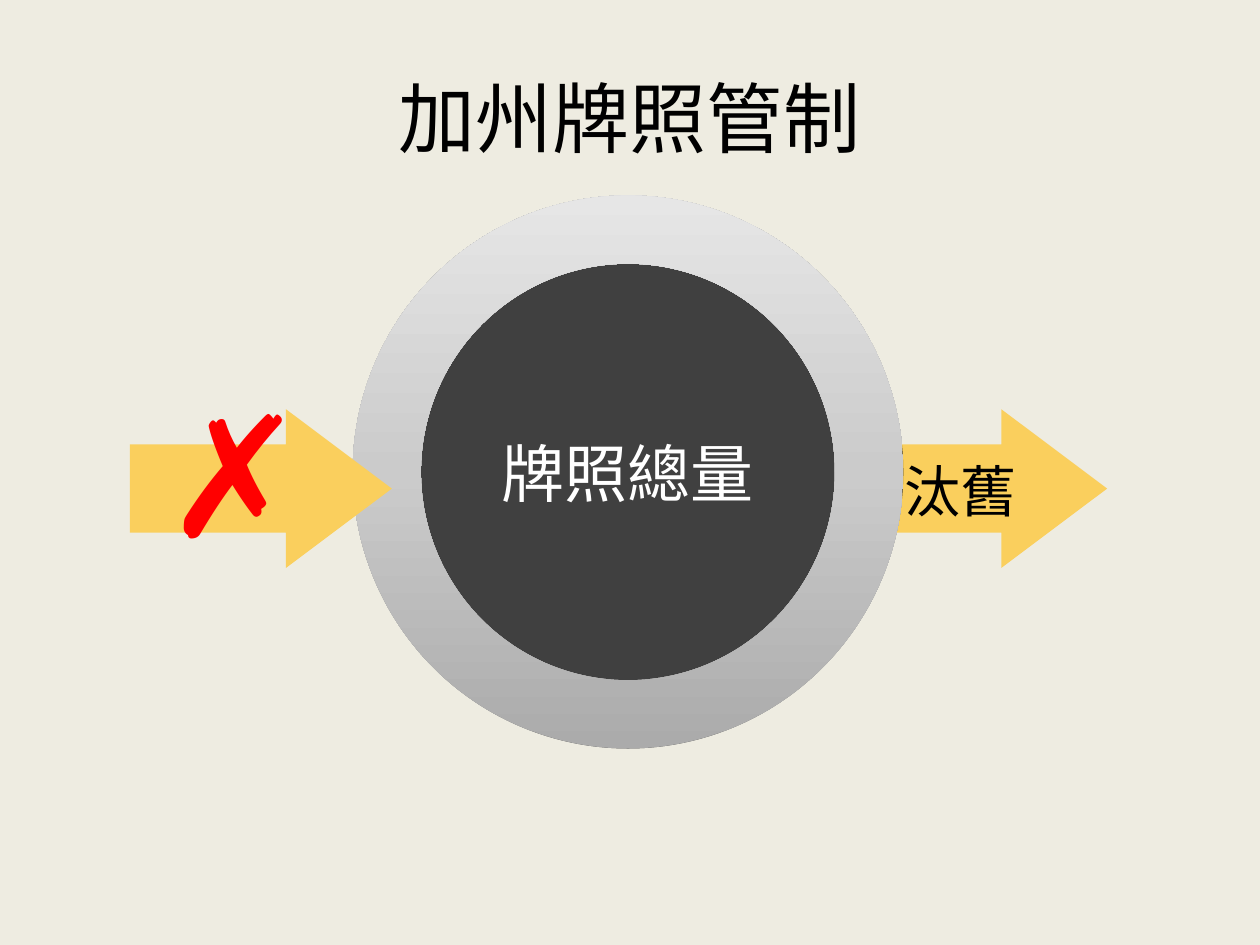
import copy
from dataclasses import dataclass

import pptx
import pptx.dml.color
import pptx.enum.shapes
import pptx.enum.text
import pptx.oxml.ns
import pptx.util
from lxml import etree

Cm = pptx.util.Cm
SHAPE = pptx.enum.shapes.MSO_SHAPE
ANCHOR = pptx.enum.text.MSO_ANCHOR
ALIGN = pptx.enum.text.PP_ALIGN
qn = pptx.oxml.ns.qn

CJK_FONT = "Noto Sans CJK SC"


@dataclass
class Box:
    """Position and size in centimetres."""
    left: float
    top: float
    width: float
    height: float

    def lengths(self) -> tuple:
        return Cm(self.left), Cm(self.top), Cm(self.width), Cm(self.height)


TITLE = Box(1.27, 0.76, 22.86, 3.18)
CIRCLE = Box(7.11, 3.94, 11.1, 11.15)
INFLOW = Box(2.62, 8.25, 5.28, 3.2)
OUTFLOW = Box(17.04, 8.25, 5.28, 3.2)
CROSS = Box(3.07, 7.32, 2.84, 4.37)
OUTFLOW_LABEL = Box(17.98, 9.07, 2.79, 1.63)


def rgb(value: str) -> pptx.dml.color.RGBColor:
    return pptx.dml.color.RGBColor.from_string(value)


def write(shape, text: str, *, size: int, color: str = "000000",
          font: str = CJK_FONT, align=ALIGN.LEFT, anchor=ANCHOR.TOP,
          wrap: bool = True) -> None:
    frame = shape.text_frame
    frame.word_wrap = wrap
    frame.vertical_anchor = anchor
    paragraph = frame.paragraphs[0]
    paragraph.alignment = align
    run = paragraph.add_run()
    run.text = text
    run.font.size = pptx.util.Pt(size)
    run.font.name = font
    run.font.color.rgb = rgb(color)
    # East Asian glyphs take their own typeface
    east_asian = etree.SubElement(run.font._element, qn("a:ea"))
    east_asian.set("typeface", font)


def add_plain_shape(slide, kind, box: Box, adjustments: tuple = ()):
    shape = slide.shapes.add_shape(kind, *box.lengths())
    shape.shadow.inherit = False
    shape.line.fill.background()
    for index, value in enumerate(adjustments):
        shape.adjustments[index] = value
    return shape


def add_solid_shape(slide, kind, box: Box, color: str, adjustments: tuple = ()):
    shape = add_plain_shape(slide, kind, box, adjustments)
    shape.fill.solid()
    shape.fill.fore_color.rgb = rgb(color)
    return shape


def add_arrow(slide, box: Box) -> None:
    add_solid_shape(slide, SHAPE.RIGHT_ARROW, box, "FACF5D", (0.556, 0.667))


def fill_gradient(shape, colors: tuple, angle: int) -> None:
    """Spread the colours evenly along the gradient."""
    shape.fill.gradient()
    shape.fill.gradient_angle = angle
    stop_list = shape._element.spPr.find(".//" + qn("a:gsLst"))
    while len(stop_list) < len(colors):
        stop_list.append(copy.deepcopy(stop_list[0]))
    for index, (stop, color) in enumerate(zip(shape.fill.gradient_stops, colors)):
        stop.position = index / (len(colors) - 1)
        stop.color.rgb = rgb(color)


def main() -> None:
    deck = pptx.Presentation()
    deck.slide_width, deck.slide_height = Cm(25.4), Cm(19.05)
    slide = deck.slides.add_slide(deck.slide_layouts[5])
    slide.background.fill.solid()
    slide.background.fill.fore_color.rgb = rgb("EEECE1")

    # Title
    title = slide.shapes.title
    title.left, title.top, title.width, title.height = TITLE.lengths()
    write(title, "加州牌照管制", size=44, align=ALIGN.CENTER, anchor=ANCHOR.MIDDLE)

    # Outflow arrow runs behind the circle
    add_arrow(slide, OUTFLOW)

    # Licence total with its surrounding ring
    total = add_solid_shape(slide, SHAPE.OVAL, CIRCLE, "404040")
    write(total, "牌照總量", size=36, color="FFFFFF", align=ALIGN.CENTER,
          anchor=ANCHOR.MIDDLE)
    ring = add_plain_shape(slide, SHAPE.DONUT, CIRCLE, (0.124,))
    fill_gradient(ring, ("ABABAB", "CBCBCB", "E6E6E6"), 90)

    # Blocked inflow lies over the ring
    add_arrow(slide, INFLOW)
    cross = slide.shapes.add_textbox(*CROSS.lengths())
    write(cross, "✗", size=96, color="FF0000", font="Arial")

    # Outflow label
    retired = slide.shapes.add_textbox(*OUTFLOW_LABEL.lengths())
    write(retired, "汰舊", size=32, wrap=False)

    deck.save("out.pptx")


if __name__ == "__main__":
    main()
